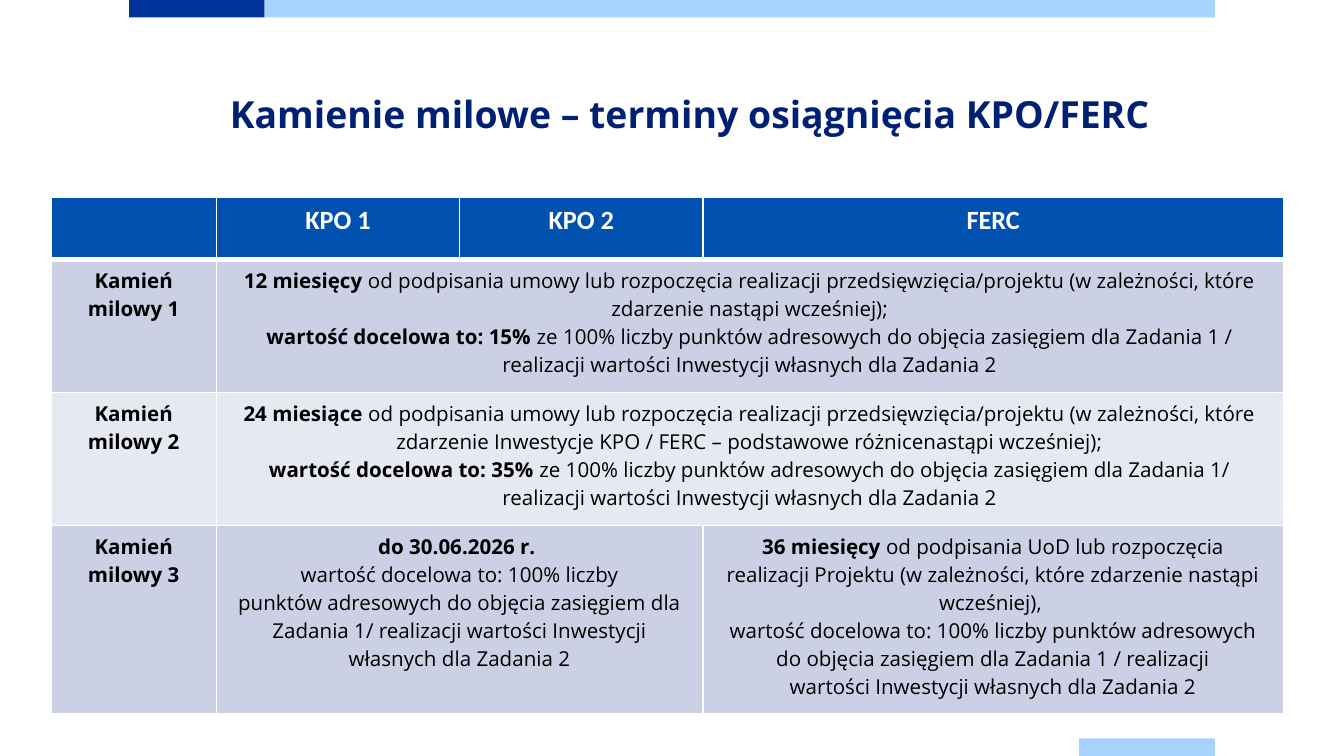
from typing import NamedTuple

from lxml.etree import SubElement
from pptx import Presentation
from pptx.dml.color import RGBColor
from pptx.enum.shapes import MSO_SHAPE as Shape
from pptx.enum.text import PP_ALIGN as Align
from pptx.oxml.ns import qn
from pptx.util import Inches, Pt

WIDE = 10
HIGH = WIDE * 9 / 16
NAVY, SKY, BLUE, WHITE = "003399", "A6D3FF", "0051B0", "FFFFFF"
DARK, LIGHT = "CCD0E4", "E7E9F2"
GLUE = chr(160)  # no-break space, marked ~ in the cell text


class Bar(NamedTuple):
    """A band; left and width are shares of the slide's width."""
    left: float
    width: float
    low: bool
    color: str


class Cell(NamedTuple):
    """Paragraphs with bold parts between ** marks, over some columns."""
    paras: list[str]
    span: int = 1


class Row(NamedTuple):
    height: float
    color: str
    style: dict
    cells: list[Cell]


BARS = [
    Bar(0.096, 0.101, False, NAVY),
    Bar(0.197, 0.707, False, SKY),
    Bar(0.803, 0.101, True, SKY),
]
COLS = [1.23, 1.81, 1.81, 4.32]
HEAD = {"size": Pt(14.1), "name": "Calibri"}
BODY = {"size": Pt(11), "name": "Open Sans"}
TITLE = {"size": Pt(20), "name": "Open Sans", "bold": True}

ROWS = [
    Row(0.46, BLUE, HEAD, [
        Cell([]), Cell(["**KPO 1**"]), Cell(["**KPO 2**"]), Cell(["**FERC**"]),
    ]),
    Row(0.99, DARK, BODY, [
        Cell(["**Kamień milowy 1**"]),
        Cell([
            "**12 miesięcy **od~podpisania umowy lub rozpoczęcia~realizacji "
            "przedsięwzięcia/projektu (w zależności, które zdarzenie~nastąpi "
            "wcześniej);",
            "**wartość docelowa to:~15%** ze 100% liczby punktów adresowych~do "
            "objęcia zasięgiem dla Zadania 1 / realizacji wartości~Inwestycji "
            "własnych dla Zadania 2",
        ], 3),
    ]),
    Row(0.99, LIGHT, BODY, [
        Cell(["**Kamień milowy 2**"]),
        Cell([
            "**24 miesiące **od~podpisania umowy lub rozpoczęcia~realizacji "
            "przedsięwzięcia/projektu (w zależności,~które zdarzenie Inwestycje "
            "KPO / FERC – podstawowe różnicenastąpi wcześniej);",
            "**wartość~docelowa to: 35% **ze 100% liczby punktów~adresowych do "
            "objęcia zasięgiem dla Zadania 1/ realizacji wartości Inwestycji "
            "własnych~dla Zadania 2",
        ], 3),
    ]),
    Row(1.4, DARK, BODY, [
        Cell(["**Kamień milowy 3**"]),
        Cell([
            "**do 30.06.2026 r.~**",
            "wartość docelowa to: 100% liczby punktów~adresowych do objęcia "
            "zasięgiem dla Zadania 1/~realizacji wartości Inwestycji własnych "
            "dla Zadania 2",
        ], 2),
        Cell([
            "**36 miesięcy** od~podpisania~UoD~lub rozpoczęcia realizacji~"
            "Projektu (w zależności, które zdarzenie~nastąpi wcześniej), ",
            "wartość docelowa to:~100% liczby punktów adresowych do~objęcia "
            "zasięgiem dla Zadania 1 / realizacji wartości~Inwestycji własnych "
            "dla Zadania 2",
        ]),
    ]),
]


def paint(target, color: str) -> None:
    target.solid()
    target.fore_color.rgb = RGBColor.from_string(color)


def style(font, color: str, values: dict) -> None:
    for key, value in values.items():
        setattr(font, key, value)
    font.color.rgb = RGBColor.from_string(color)


def draw_bar(slide, bar: Bar) -> None:
    thick = 0.13
    top = HIGH - thick if bar.low else 0
    shape = slide.shapes.add_shape(
        Shape.RECTANGLE, Inches(bar.left * WIDE), Inches(top),
        Inches(bar.width * WIDE), Inches(thick))
    shape.shadow.inherit = False
    shape.line.fill.background()
    paint(shape.fill, bar.color)


def draw_title(slide, text: str) -> None:
    box = slide.shapes.add_textbox(
        Inches(0.96), Inches(0.67), Inches(8.08), Inches(0.8))
    frame = box.text_frame
    frame.word_wrap = True
    for side in ("left", "top", "right", "bottom"):
        setattr(frame, f"margin_{side}", 0)
    para = frame.paragraphs[0]
    para.line_spacing = Pt(24.5)
    tabs = SubElement(para._p.get_or_add_pPr(), qn("a:tabLst"))
    SubElement(tabs, qn("a:tab"), pos=str(Inches(0.75)), algn="l")
    run = para.add_run()
    run.text = text
    style(run.font, "002073", TITLE)


def edge(cell, widths: dict[str, float]) -> None:
    """Add white borders; call before the fill, which must follow them."""
    props = cell._tc.get_or_add_tcPr()
    for side, width in widths.items():
        line = SubElement(props, qn(f"a:ln{side}"), w=str(Pt(width)))
        fill = SubElement(line, qn("a:solidFill"))
        SubElement(fill, qn("a:srgbClr"), val=WHITE)


def write(cell, paras: list[str], color: str, values: dict) -> None:
    frame = cell.text_frame
    for i, text in enumerate(paras):
        para = frame.add_paragraph() if i else frame.paragraphs[0]
        para.alignment = Align.CENTER
        for j, part in enumerate(text.split("**")):
            if part:
                run = para.add_run()
                run.text = part.replace("~", GLUE)
                style(run.font, color, values | {"bold": j % 2 == 1})


def draw_table(slide) -> None:
    table = slide.shapes.add_table(
        len(ROWS), len(COLS), Inches(0.38), Inches(1.47), Inches(sum(COLS)),
        Inches(sum(row.height for row in ROWS))).table
    for col, width in zip(table.columns, COLS):
        col.width = Inches(width)
    for r, row in enumerate(ROWS):
        table.rows[r].height = Inches(row.height)
        rule = {"L": 1, "R": 1, "T": 3 if r == 1 else 1, "B": 1 if r else 3}
        for c in range(len(COLS)):
            edge(table.cell(r, c), rule)
            paint(table.cell(r, c).fill, row.color)
        c = 0
        for item in row.cells:
            cell = table.cell(r, c)
            if item.span > 1:
                cell.merge(table.cell(r, c + item.span - 1))
            write(cell, item.paras, "000000" if r else WHITE, row.style)
            c += item.span


def main() -> None:
    deck = Presentation()
    deck.slide_width, deck.slide_height = Inches(WIDE), Inches(HIGH)
    slide = deck.slides.add_slide(deck.slide_layouts[6])
    for bar in BARS:
        draw_bar(slide, bar)
    draw_title(slide, "\tKamienie milowe – terminy osiągnięcia KPO/FERC")
    draw_table(slide)
    deck.save("out.pptx")


if __name__ == "__main__":
    main()
